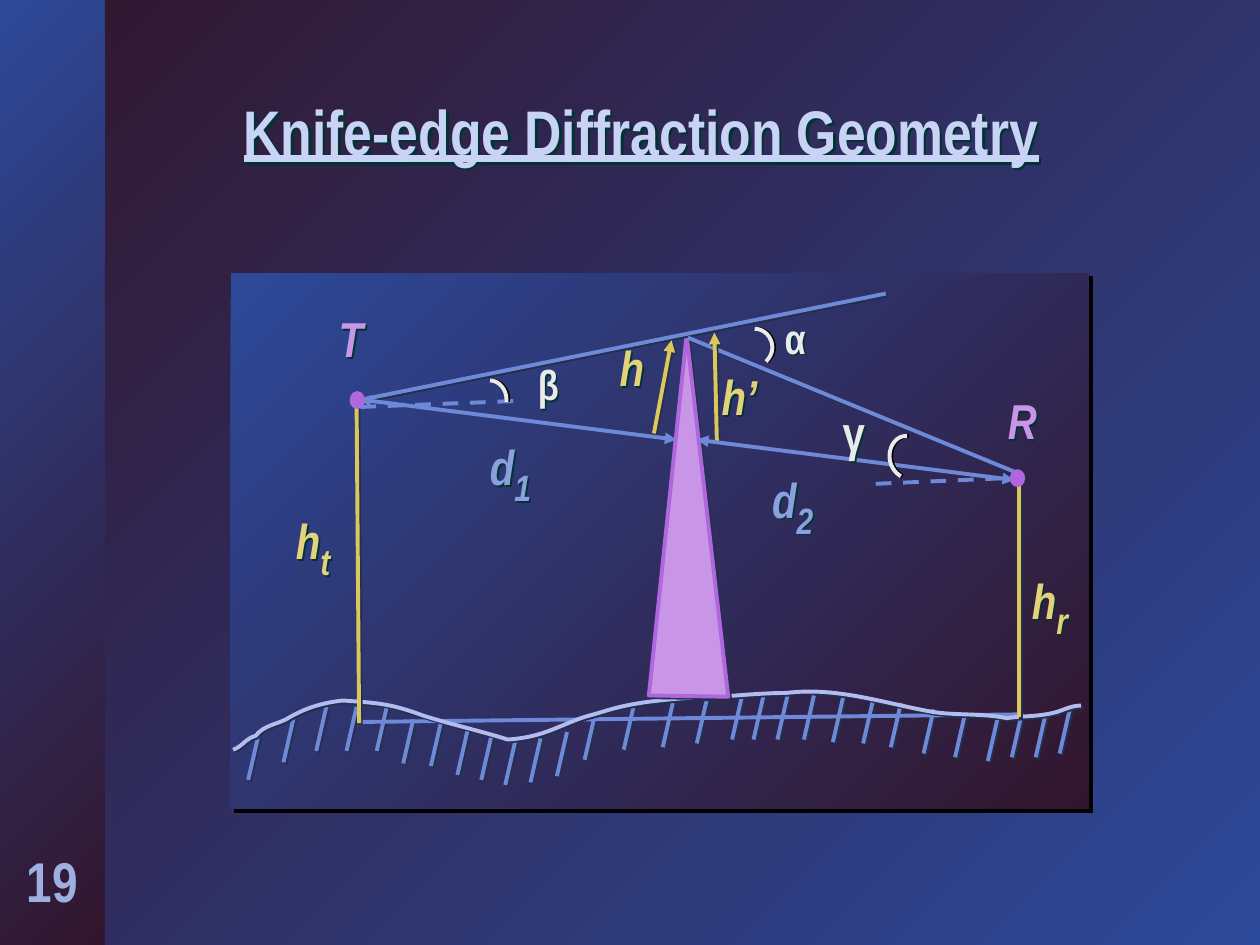
from dataclasses import dataclass

from lxml.etree import SubElement
from pptx import Presentation
from pptx.dml.color import RGBColor
from pptx.enum.dml import MSO_LINE
from pptx.enum.shapes import MSO_CONNECTOR, MSO_SHAPE
from pptx.enum.text import MSO_ANCHOR, PP_ALIGN
from pptx.oxml.ns import qn
from pptx.util import Inches, Pt


@dataclass(frozen=True)
class Theme:
    font: str = "Arial Narrow"
    dark: str = "32162D"
    blue: str = "2D4999"
    title: str = "C8D3F6"
    number: str = "9EB0E2"
    ray: str = "6D89D7"
    ground: str = "B2BCF0"
    height: str = "DCC75C"
    height_text: str = "E3D27B"
    mast: str = "C895E7"
    mast_edge: str = "B067DD"
    distance_text: str = "8BA1DF"
    angle: str = "EAEAEA"
    line_shadow: str = "242F4E"
    text_shadow: str = "003333"
    black: str = "000000"
    line_width: float = 2.25
    title_size: int = 36
    number_size: int = 32
    label_size: int = 28
    angle_size: int = 24
    subscript_size: int = 36


@dataclass(frozen=True)
class Box:
    left: float
    top: float
    width: float
    height: float

    def point(self, x, y):
        return Inches(self.left + x), Inches(self.top + y)

    def inside(self, x, y, width, height):
        return Box(self.left + x, self.top + y, width, height)

    def frame(self):
        return [Inches(n) for n in (self.left, self.top, self.width, self.height)]


THEME = Theme()
HATCH_TOPS = [
    (0.22, 3.67), (0.5, 3.53), (0.76, 3.44), (1, 3.44), (1.24, 3.44), (1.45, 3.54),
    (1.67, 3.56), (1.88, 3.63), (2.07, 3.67), (2.26, 3.71), (2.46, 3.69), (2.67, 3.64),
    (2.89, 3.51), (3.2, 3.43), (3.51, 3.41), (3.78, 3.38), (4.06, 3.35), (4.23, 3.35),
    (4.42, 3.35), (4.63, 3.35), (4.86, 3.37), (5.1, 3.38), (5.32, 3.41), (5.58, 3.46),
    (5.83, 3.49), (6.09, 3.52), (6.28, 3.49), (6.47, 3.49), (6.66, 3.46),
]
GROUND = [
    (0.02, 3.78), (0.09, 3.76), (0.12, 3.69), (0.2, 3.67), (0.26, 3.59), (0.36, 3.58),
    (0.44, 3.54), (0.59, 3.45), (0.72, 3.41), (0.89, 3.39), (1.16, 3.41), (1.26, 3.41),
    (1.53, 3.51), (1.75, 3.58), (1.98, 3.63), (2.2, 3.7), (2.48, 3.68), (2.58, 3.6),
    (2.81, 3.52), (3.04, 3.46), (3.1, 3.41), (3.62, 3.37), (3.88, 3.37), (4.15, 3.33),
    (4.41, 3.33), (4.81, 3.28), (5.18, 3.41), (5.57, 3.48), (5.76, 3.51), (5.97, 3.49),
    (6.16, 3.53), (6.3, 3.51), (6.42, 3.52), (6.56, 3.48), (6.62, 3.46), (6.68, 3.43),
    (6.75, 3.43),
]
ANGLE_ARCS = [
    [(4.16, 0.44), (4.24, 0.44), (4.3, 0.51), (4.3, 0.59), (4.3, 0.63), (4.28, 0.67), (4.25, 0.7)],
    [(2.06, 0.85), (2.13, 0.85), (2.19, 0.92), (2.19, 1), (2.19, 1.01), (2.19, 1.01), (2.19, 1.02)],
    [(5.37, 1.29), (5.37, 1.29), (5.37, 1.29), (5.36, 1.29), (5.29, 1.29), (5.23, 1.36),
     (5.23, 1.45), (5.23, 1.52), (5.27, 1.58), (5.32, 1.61)],
]


def set_shadow(shape, color=None, distance=1.4, angle=45):
    properties = shape._element.spPr
    for old in properties.findall(qn("a:effectLst")):
        properties.remove(old)
    effects = SubElement(properties, qn("a:effectLst"))
    if color:
        shadow = SubElement(effects, qn("a:outerShdw"), dist=str(Pt(distance)),
                            dir=str(angle * 60000), algn="ctr", rotWithShape="0")
        SubElement(shadow, qn("a:srgbClr"), val=color)


def set_gradient(fill, start, end):
    fill.gradient()
    fill.gradient_angle = 315
    for stop, color in zip(fill.gradient_stops, (start, end)):
        stop.color.rgb = RGBColor.from_string(color)


def set_line(shape, color):
    shape.line.color.rgb = RGBColor.from_string(color)
    shape.line.width = Pt(THEME.line_width)


def format_run(run, size, color, italic=False):
    run.font.name = THEME.font
    run.font.size = Pt(size)
    run.font.bold = True
    run.font.italic = italic
    run.font.color.rgb = RGBColor.from_string(color)


def add_line(shapes, box, start, end, color, arrows=(), dashed=False, shadow=THEME.line_shadow):
    line = shapes.add_connector(MSO_CONNECTOR.STRAIGHT, *box.point(*start), *box.point(*end))
    set_line(line, color)
    if dashed:
        line.line.dash_style = MSO_LINE.DASH
    for arrow in arrows:
        SubElement(line.line._get_or_add_ln(), qn(f"a:{arrow}"), type="triangle")
    set_shadow(line, shadow)


def add_outline(shapes, box, points, color, fill=None):
    first, *rest = [box.point(*point) for point in points]
    builder = shapes.build_freeform(*first, scale=1.0)
    builder.add_line_segments(rest, close=fill is not None)
    shape = builder.convert_to_shape()
    set_line(shape, color)
    if fill:
        shape.fill.solid()
        shape.fill.fore_color.rgb = RGBColor.from_string(fill)
    else:
        shape.fill.background()
    return shape


def add_curve(shapes, box, knots, color):
    shape = add_outline(shapes, box, knots, color)
    outline = next(shape._element.iter(qn("a:path")))
    segments = outline.findall(qn("a:lnTo"))
    for index in range(0, len(segments), 3):
        curve = SubElement(outline, qn("a:cubicBezTo"))
        for segment in segments[index:index + 3]:
            curve.append(segment[0])
            outline.remove(segment)
    return shape


def add_label(shapes, box, text, color, size=THEME.label_size, subscript="", italic=True):
    label = shapes.add_textbox(*box.frame())
    label.text_frame.word_wrap = True
    paragraph = label.text_frame.paragraphs[0]
    paragraph.text = text
    paragraph.line_spacing = 0.85
    format_run(paragraph.runs[0], size, color, italic)
    if subscript:
        run = paragraph.add_run()
        run.text = subscript
        format_run(run, THEME.subscript_size, color, italic)
        run._r.get_or_add_rPr().set("baseline", "-25000")
    set_shadow(label, THEME.text_shadow)


def add_side_band(slide, box):
    band = slide.shapes.add_shape(MSO_SHAPE.RECTANGLE, *box.frame())
    band.shadow.inherit = False
    set_gradient(band.fill, THEME.blue, THEME.dark)
    band.line.fill.background()
    number = slide.shapes.add_textbox(*box.inside(0.08, 6.67, 0.67, 0.63).frame())
    number.text_frame.word_wrap = True
    paragraph = number.text_frame.paragraphs[0]
    paragraph.text = "19"
    paragraph.alignment = PP_ALIGN.CENTER
    format_run(paragraph.runs[0], THEME.number_size, THEME.number)


def add_title(slide, box):
    title = slide.shapes.title
    title.left, title.top, title.width, title.height = box.frame()
    title.text_frame.text = "Knife-edge Diffraction Geometry"
    title.text_frame.vertical_anchor = MSO_ANCHOR.MIDDLE
    paragraph = title.text_frame.paragraphs[0]
    paragraph.alignment = PP_ALIGN.CENTER
    paragraph.line_spacing = 0.9
    format_run(paragraph.runs[0], THEME.title_size, THEME.title)
    paragraph.runs[0].font.underline = True
    set_shadow(title, THEME.text_shadow, 2)


def add_terrain(shapes, box):
    for x, y in HATCH_TOPS:
        add_line(shapes, box, (x, y), (x - 0.08, y + 0.35), THEME.ray)
    add_line(shapes, box, (1.02, 3.56), (6.26, 3.5), THEME.ray, shadow=None)
    set_shadow(add_curve(shapes, box, GROUND, THEME.ground), THEME.line_shadow)
    mast = add_outline(shapes, box, [(3.32, 3.35), (3.62, 0.49), (3.95, 3.36)],
                       THEME.mast_edge, THEME.mast)
    set_shadow(mast, THEME.line_shadow)


def add_rays(shapes, box):
    for start, end in [((1, 1.01), (5.2, 0.16)), ((3.63, 0.51), (6.26, 1.59))]:
        add_line(shapes, box, start, end, THEME.ray)
    for start, end in [((6.26, 1.59), (6.26, 3.52)), ((1, 1.01), (1.02, 3.57))]:
        add_line(shapes, box, start, end, THEME.height)
    for start, end in [((3.84, 0.47), (3.86, 1.35)), ((3.5, 0.53), (3.36, 1.27))]:
        add_line(shapes, box, start, end, THEME.height, ["headEnd"])
    for start, end in [((5.12, 1.67), (6.27, 1.62)), ((1.03, 1.06), (2.33, 1.01))]:
        add_line(shapes, box, start, end, THEME.ray, dashed=True, shadow=None)
    for start, end in [((3.7, 1.32), (6.22, 1.64)), ((1.02, 1), (3.54, 1.32))]:
        add_line(shapes, box, start, end, THEME.ray, ["headEnd", "tailEnd"], shadow=None)
    for knots in ANGLE_ARCS:
        set_shadow(add_curve(shapes, box, knots, THEME.angle), THEME.black, 1, 0)
    for x, y in [(0.96, 0.95), (6.2, 1.57)]:
        antenna = shapes.add_shape(MSO_SHAPE.OVAL, *box.inside(x, y, 0.09, 0.11).frame())
        antenna.shadow.inherit = False
        antenna.fill.solid()
        antenna.fill.fore_color.rgb = RGBColor.from_string(THEME.mast_edge)
        set_line(antenna, THEME.mast_edge)


def add_labels(shapes, box):
    for x, y, width, text, subscript, color in [
        (6.26, 2.23, 0.75, "h", "r", THEME.height_text),
        (3.8, 0.76, 0.56, "h’", "", THEME.height_text),
        (0.42, 1.76, 0.66, "h", "t", THEME.height_text),
        (6.07, 0.95, 0.56, "R", "", THEME.mast),
        (0.76, 0.3, 0.56, "T", "", THEME.mast),
        (2.99, 0.53, 0.47, "h", "", THEME.height_text),
        (1.96, 1.17, 0.65, "d", "1", THEME.distance_text),
        (4.2, 1.43, 0.66, "d", "2", THEME.distance_text),
    ]:
        add_label(shapes, box.inside(x, y, width, 0.75), text, color, subscript=subscript)
    for x, y, height, text, size in [(2.34, 0.69, 0.66, "β", THEME.angle_size),
                                     (4.3, 0.32, 0.66, "α", THEME.angle_size),
                                     (4.76, 1.05, 0.75, "γ", THEME.label_size)]:
        add_label(shapes, box.inside(x, y, 0.56, height), text, THEME.angle, size, italic=False)


def add_diagram(slide, box):
    shapes = slide.shapes.add_group_shape().shapes
    panel = shapes.add_shape(MSO_SHAPE.RECTANGLE, *box.frame())
    set_gradient(panel.fill, THEME.blue, THEME.dark)
    panel.line.fill.background()
    set_shadow(panel, THEME.black, 2.8)
    for add_part in (add_terrain, add_rays, add_labels):
        add_part(shapes, box)


def main():
    presentation = Presentation()
    presentation.slide_width, presentation.slide_height = Inches(10), Inches(7.5)
    slide = presentation.slides.add_slide(presentation.slide_layouts[5])
    set_gradient(slide.background.fill, THEME.dark, THEME.blue)
    add_side_band(slide, Box(0, 0, 0.83, 7.5))
    add_title(slide, Box(1.13, 0.74, 7.92, 0.66))
    add_diagram(slide, Box(1.83, 2.17, 6.81, 4.25))
    presentation.save("out.pptx")


if __name__ == "__main__":
    main()
